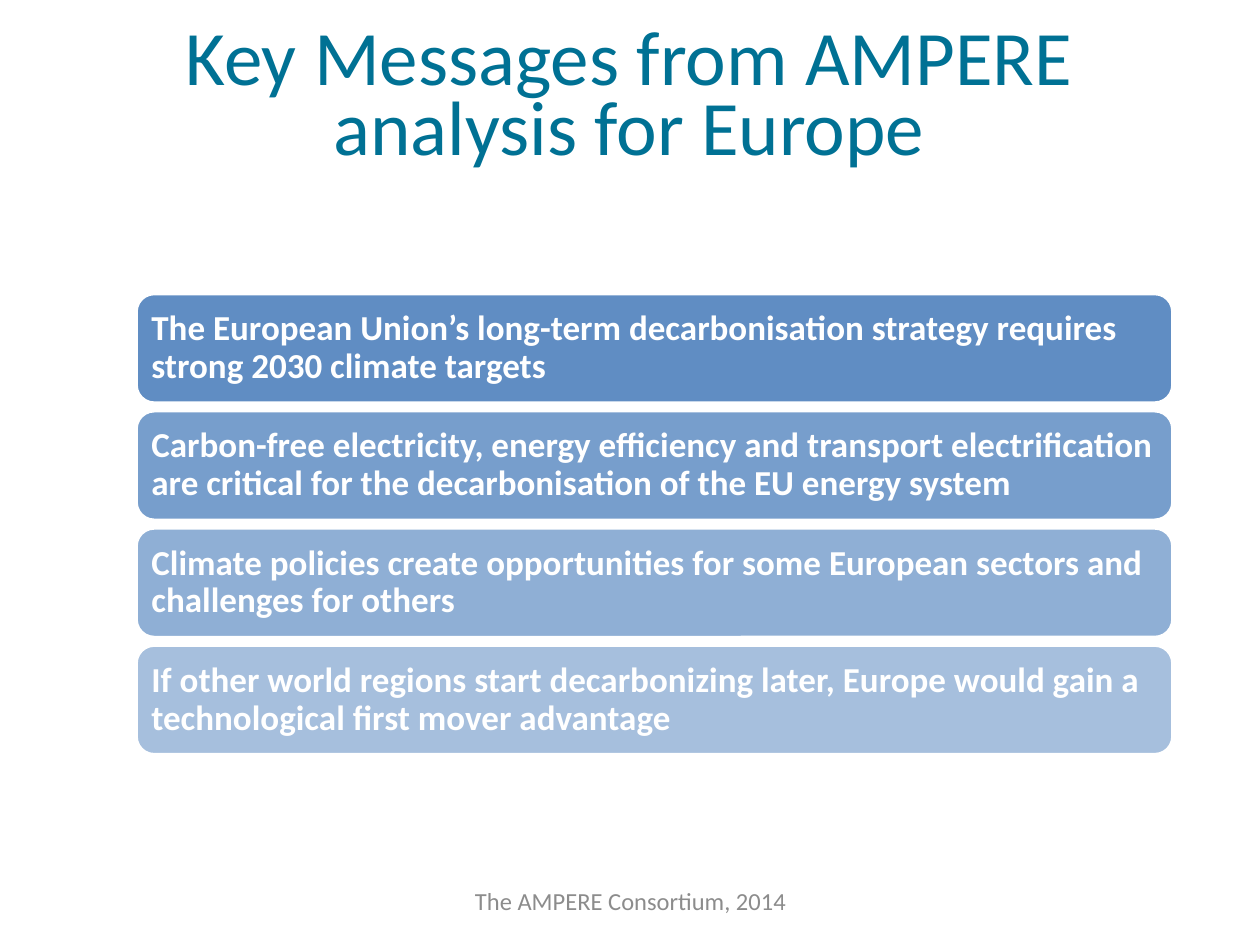
from dataclasses import dataclass

from lxml import etree
from pptx import Presentation
from pptx.dml.color import RGBColor
from pptx.enum.shapes import MSO_SHAPE
from pptx.enum.text import MSO_ANCHOR, MSO_AUTO_SIZE, PP_ALIGN
from pptx.oxml.ns import qn
from pptx.util import Inches, Pt

ROUND = MSO_SHAPE.ROUNDED_RECTANGLE
MIDDLE = MSO_ANCHOR.MIDDLE
FIXED = MSO_AUTO_SIZE.NONE
LEFT, CENTER = PP_ALIGN.LEFT, PP_ALIGN.CENTER

WIDTH, HEIGHT = 10, 7.5
TITLE = "Key Messages from AMPERE analysis for Europe"
FOOTER = "The AMPERE Consortium, 2014"
MESSAGES = [
    "The European Union’s long-term decarbonisation strategy requires strong 2030 climate targets",
    "Carbon-free electricity, energy efficiency and transport electrification are critical "
    "for the decarbonisation of the EU energy system",
    "Climate policies create opportunities for some European sectors and challenges for others",
    "If other world regions start decarbonizing later, Europe would gain a "
    "technological first mover advantage",
]


@dataclass
class Theme:
    """Colours and type sizes of the slide."""
    font: str = "Calibri"
    teal: str = "007194"
    blue: str = "4F81BD"
    white: str = "FFFFFF"
    grey: str = "8C8C8C"
    head: int = 44
    body: int = 20
    foot: int = 14


class Deck:
    """Draws styled elements on the current slide, placed by shares of its size."""

    def __init__(self, theme):
        """Start a deck with one title-only slide."""
        self.theme = theme
        self.prs = Presentation()
        self.prs.slide_width, self.prs.slide_height = Inches(WIDTH), Inches(HEIGHT)
        self.slide = self.prs.slides.add_slide(self.prs.slide_layouts[5])

    def area(self, x, y, w, h):
        """Turn shares of the slide into lengths."""
        wide, high = self.prs.slide_width, self.prs.slide_height
        return round(x * wide), round(y * high), round(w * wide), round(h * high)

    def label(self, shape, text, size, color, align=CENTER, bold=False):
        """Fill a shape with one styled paragraph and return it."""
        frame = shape.text_frame
        frame.text = text
        frame.word_wrap = True
        frame.auto_size = FIXED
        frame.vertical_anchor = MIDDLE
        para = frame.paragraphs[0]
        para.alignment = align
        font = para.font
        font.name, font.size, font.bold = self.theme.font, Pt(size), bold
        font.color.rgb = RGBColor.from_string(color)
        return para

    def title(self, text, *share):
        """Place the title with tight fixed line spacing."""
        shape = self.slide.shapes.title
        shape.left, shape.top, shape.width, shape.height = self.area(*share)
        para = self.label(shape, text, self.theme.head, self.theme.teal)
        para.line_spacing = Pt(40)

    def footer(self, text, *share):
        """Add the centred footer."""
        box = self.slide.shapes.add_textbox(*self.area(*share))
        self.label(box, text, self.theme.foot, self.theme.grey)

    def bar(self, text, alpha, *share):
        """Add a rounded message bar with the given opacity in percent."""
        bar = self.slide.shapes.add_shape(ROUND, *self.area(*share))
        bar.shadow.inherit = False
        bar.fill.solid()
        bar.fill.fore_color.rgb = RGBColor.from_string(self.theme.blue)
        tint = bar.element.spPr.find(qn("a:solidFill"))[0]
        etree.SubElement(tint, qn("a:alpha")).set("val", str(round(alpha * 1000)))
        bar.line.color.rgb = RGBColor.from_string(self.theme.white)
        bar.line.width = Pt(2)
        frame = bar.text_frame
        frame.margin_left = frame.margin_right = Inches(0.08)
        frame.margin_top = frame.margin_bottom = Inches(0.08)
        para = self.label(bar, text, self.theme.body, self.theme.white, LEFT, True)
        para.line_spacing = 0.9

    def stack(self, texts, x, y, w, h, step):
        """Stack message bars that fade from 90 to 50 percent."""
        fade = 40 / (len(texts) - 1)
        for row, text in enumerate(texts):
            self.bar(text, 90 - row * fade, x, y + row * step, w, h)


def main():
    """Build and save the slide."""
    deck = Deck(Theme())
    deck.title(TITLE, 0.43 / WIDTH, 0.29 / HEIGHT, 9.13 / WIDTH, 1.02 / HEIGHT)
    deck.stack(MESSAGES, 1.08 / WIDTH, 2.33 / HEIGHT, 8.23 / WIDTH,
               0.87 / HEIGHT, 0.93 / HEIGHT)
    deck.footer(FOOTER, 3.42 / WIDTH, 6.95 / HEIGHT, 3.17 / WIDTH, 0.4 / HEIGHT)
    deck.prs.save("out.pptx")


if __name__ == "__main__":
    main()
